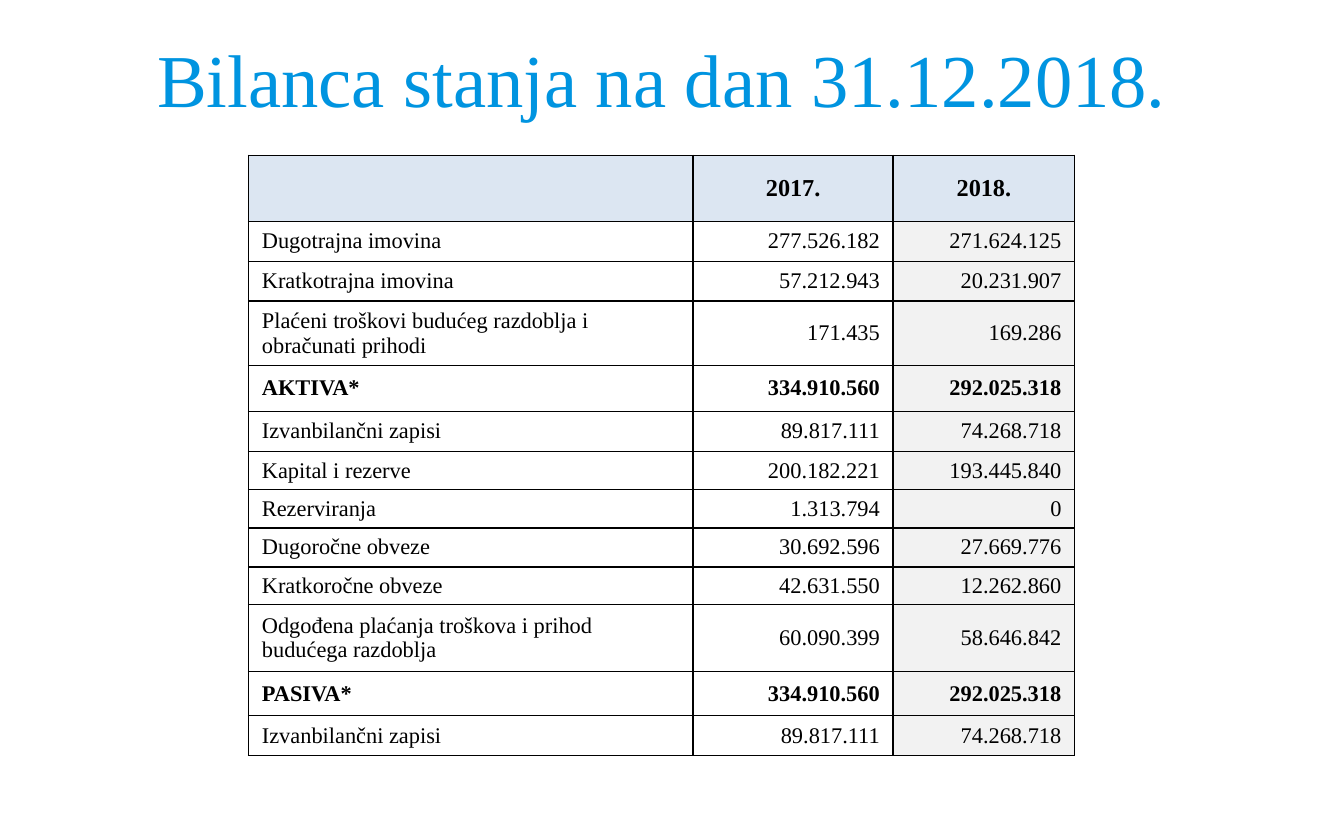
from dataclasses import dataclass
from typing import Optional

from lxml.etree import SubElement
from pptx import Presentation
from pptx.dml.color import RGBColor as Rgb
from pptx.enum.text import MSO_ANCHOR as Anchor, PP_ALIGN as Align
from pptx.oxml.ns import qn
from pptx.util import Cm, Pt


@dataclass(frozen=True)
class Theme:
    font: str = "Times New Roman"
    title_color: str = "0094E0"
    ink: str = "000000"
    header_fill: str = "DCE6F2"
    current_year_fill: str = "F2F2F2"
    title_size: float = 40
    header_size: float = 13
    body_size: float = 12
    border_width: float = 1


@dataclass(frozen=True)
class BalanceRow:
    label: str
    previous: str
    current: str
    height: float
    bold: bool = False


THEME = Theme()
COLUMN_WIDTHS = (8.4, 3.78, 3.43)
HEADER = BalanceRow("", "2017.", "2018.", 1.25, True)
ENTRIES = (
    BalanceRow("Dugotrajna imovina", "277.526.182", "271.624.125", 0.75),
    BalanceRow("Kratkotrajna imovina", "57.212.943", "20.231.907", 0.75),
    BalanceRow("Plaćeni troškovi budućeg razdoblja i obračunati prihodi",
               "171.435", "169.286", 1.2),
    BalanceRow("AKTIVA*", "334.910.560", "292.025.318", 0.87, True),
    BalanceRow("Izvanbilančni zapisi", "89.817.111", "74.268.718", 0.76),
    BalanceRow("Kapital i rezerve", "200.182.221", "193.445.840", 0.72),
    BalanceRow("Rezerviranja", "1.313.794", "0", 0.72),
    BalanceRow("Dugoročne obveze", "30.692.596", "27.669.776", 0.74),
    BalanceRow("Kratkoročne obveze", "42.631.550", "12.262.860", 0.7),
    BalanceRow("Odgođena plaćanja troškova i prihod budućega razdoblja",
               "60.090.399", "58.646.842", 1.27),
    BalanceRow("PASIVA*", "334.910.560", "292.025.318", 0.83, True),
    BalanceRow("Izvanbilančni zapisi", "89.817.111", "74.268.718", 0.76),
)


def write(frame, text: str, size: float, color: str, align: Align,
          bold: bool = False) -> None:
    frame.text = text
    paragraph = frame.paragraphs[0]
    paragraph.alignment = align
    for run in paragraph.runs:
        run.font.name = THEME.font
        run.font.size = Pt(size)
        run.font.bold = bold
        run.font.color.rgb = Rgb.from_string(color)


def add_borders(cell) -> None:
    properties = cell._tc.get_or_add_tcPr()
    for position, side in enumerate(("a:lnL", "a:lnR", "a:lnT", "a:lnB")):
        border = SubElement(properties, qn(side), w=str(Pt(THEME.border_width)))
        solid = SubElement(border, qn("a:solidFill"))
        SubElement(solid, qn("a:srgbClr"), val=THEME.ink)
        properties.insert(position, border)


def draw_cell(cell, text: str, size: float, align: Align, bold: bool,
              fill: Optional[str]) -> None:
    cell.vertical_anchor = Anchor.MIDDLE
    cell.margin_left = cell.margin_right = Cm(0.25)
    cell.margin_top = cell.margin_bottom = Cm(0.1)
    if fill:
        cell.fill.solid()
        cell.fill.fore_color.rgb = Rgb.from_string(fill)
    else:
        cell.fill.background()
    write(cell.text_frame, text, size, THEME.ink, align, bold)
    add_borders(cell)


def draw_title(slide) -> None:
    title = slide.shapes.add_textbox(Cm(1.3), Cm(0.33), Cm(22.76), Cm(2.29))
    title.text_frame.word_wrap = True
    title.text_frame.vertical_anchor = Anchor.MIDDLE
    write(title.text_frame, "Bilanca stanja na dan 31.12.2018. ",
          THEME.title_size, THEME.title_color, Align.CENTER)


def draw_balance(slide) -> None:
    rows = (HEADER, *ENTRIES)
    balance = slide.shapes.add_table(
        len(rows), len(COLUMN_WIDTHS), Cm(4.7), Cm(2.94),
        Cm(sum(COLUMN_WIDTHS)), Cm(sum(row.height for row in rows))).table
    balance.first_row = balance.horz_banding = False
    for column, width in zip(balance.columns, COLUMN_WIDTHS):
        column.width = Cm(width)
    body_aligns = (Align.LEFT, Align.RIGHT, Align.RIGHT)
    body_fills = (None, None, THEME.current_year_fill)
    for r, row in enumerate(rows):
        balance.rows[r].height = Cm(row.height)
        for c, text in enumerate((row.label, row.previous, row.current)):
            cell = balance.cell(r, c)
            if row is HEADER:
                draw_cell(cell, text, THEME.header_size, Align.CENTER,
                          row.bold, THEME.header_fill)
            else:
                draw_cell(cell, text, THEME.body_size, body_aligns[c],
                          row.bold, body_fills[c])


def main() -> None:
    deck = Presentation()
    deck.slide_width, deck.slide_height = Cm(25.4), Cm(15.88)
    slide = deck.slides.add_slide(deck.slide_layouts[6])
    draw_title(slide)
    draw_balance(slide)
    deck.save("out.pptx")


if __name__ == "__main__":
    main()
